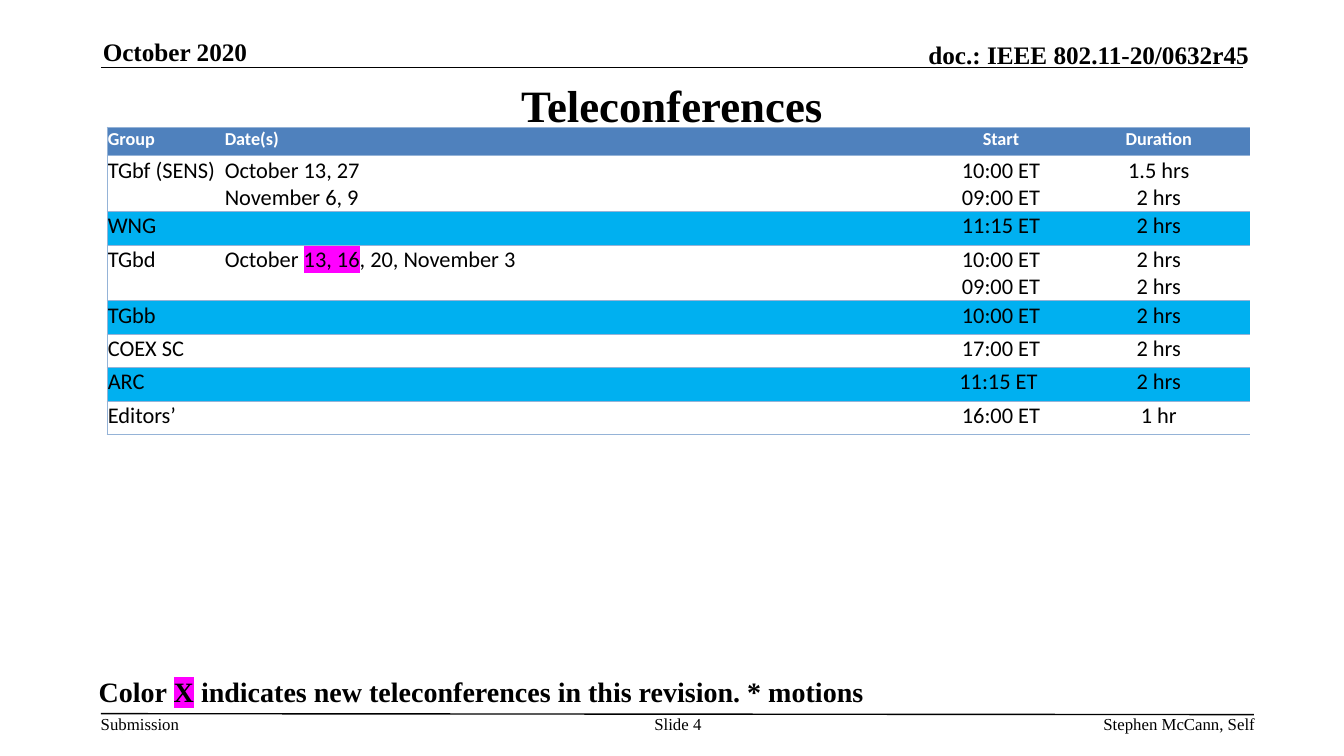
from dataclasses import dataclass
from typing import Any

from lxml.etree import SubElement as Sub
from pptx import Presentation
from pptx.dml.color import RGBColor as Rgb
from pptx.enum.shapes import MSO_CONNECTOR as Link
from pptx.enum.text import MSO_ANCHOR as Anchor, MSO_AUTO_SIZE as Auto, PP_ALIGN as Align
from pptx.oxml.ns import qn
from pptx.util import Inches, Pt

WIDE, HIGH = Inches(13.33), Inches(7.5)
HUES = {"ink": "000000", "paper": "FFFFFF", "head": "4F81BD",
        "band": "00B0F0", "rule": "95B3D7", "mark": "FF00FF"}
SERIF, SANS = "Times New Roman", "Calibri"
PLAIN_GRID = "{2D5ABB26-0587-4C30-8999-92F81FD0307C}"
SIDES = ("margin_left", "margin_right", "margin_top", "margin_bottom")
COLS = (8.7, 52.88, 9.9, 13.58)
HEAD_ROW, ONE_LINE, TWO_LINE = 3.8, 4.43, 7.3


@dataclass(frozen=True)
class Style:
    size: float
    bold: bool = False
    face: str = SERIF
    hue: str = "ink"


@dataclass(frozen=True)
class Label:
    text: str
    box: tuple[float, float, float, float]
    style: Style
    align: Align = Align.LEFT
    anchor: Anchor = Anchor.TOP
    pad: tuple[float, float] = (0, 0)
    wrap: bool = True


@dataclass(frozen=True)
class Meeting:
    group: str
    dates: str
    start: str
    length: str


@dataclass(frozen=True)
class Rule:
    left: float
    top: float
    right: float
    base: float


SMALL, LARGE = Style(12), Style(18, True)
HEAD, BODY = Style(13, True, SANS, "paper"), Style(16, False, SANS)

TITLE = Label("Teleconferences", (7.5, 10, 85, 7.73), Style(32, True),
              Align.CENTER, Anchor.MIDDLE, (0.1, 0.05))
LABELS = (
    Label("Submission", (7.5, 94.4, 5.93, 2.67), SMALL, wrap=False),
    Label("doc.: IEEE 802.11-20/0632r45", (54.68, 5.2, 38.25, 4), LARGE,
          Align.RIGHT, Anchor.BOTTOM),
    Label("Slide 4", (47.55, 94.4, 5.78, 5.33), SMALL, Align.CENTER),
    Label("Stephen McCann, Self", (58.58, 94.4, 34.8, 2.67), SMALL, Align.RIGHT),
    Label("October 2020", (7.65, 4.8, 20.48, 4), LARGE, anchor=Anchor.BOTTOM),
    Label("Color |X| indicates new teleconferences in this revision. * motions",
          (6.6, 88.53, 88.43, 5.87), Style(20, True), pad=(0.1, 0.05)),
)
RULES = (Rule(7.5, 8.93, 92.5, 8.93), Rule(7.5, 94.4, 93.3, 94.53))
MEETINGS = (
    Meeting("Group", "Date(s)", "Start", "Duration"),
    Meeting("TGbf (SENS)", "October 13, 27\nNovember 6, 9",
            "10:00 ET\n09:00 ET", "1.5 hrs\n2 hrs"),
    Meeting("WNG", "", "11:15 ET", "2 hrs"),
    Meeting("TGbd", "October |13, 16|, 20, November 3",
            "10:00 ET\n09:00 ET", "2 hrs\n2 hrs"),
    Meeting("TGbb", "", "10:00 ET", "2 hrs"),
    Meeting("COEX SC", "", "17:00 ET", "2 hrs"),
    Meeting("ARC", "", "11:15 ET ", "2 hrs"),
    Meeting("Editors’", "", "16:00 ET", "1 hr"),
)


def across(share: float) -> int:
    return round(WIDE * share / 100)


def down(share: float) -> int:
    return round(HIGH * share / 100)


def place(box: tuple[float, float, float, float]) -> tuple[int, int, int, int]:
    left, top, width, height = box
    return across(left), down(top), across(width), down(height)


def apply(item: Any, values: dict[str, Any]) -> None:
    for name, value in values.items():
        setattr(item, name, value)


def shade(run: Any) -> None:
    props = run.font._element
    mark = Sub(props, qn("a:highlight"))
    Sub(mark, qn("a:srgbClr"), val=HUES["mark"])
    props.find(qn("a:solidFill")).addnext(mark)


def write(frame: Any, text: str, style: Style, align: Align) -> None:
    for row, line in enumerate(text.split("\n")):
        para = frame.paragraphs[0] if row == 0 else frame.add_paragraph()
        para.alignment = align
        for spot, part in enumerate(line.split("|")):
            if not part:
                continue
            run = para.add_run()
            run.text = part
            apply(run.font, {"size": Pt(style.size), "bold": style.bold, "name": style.face})
            run.font.color.rgb = Rgb.from_string(HUES[style.hue])
            if spot % 2:
                shade(run)


def set_label(shape: Any, label: Label) -> None:
    apply(shape, dict(zip(("left", "top", "width", "height"), place(label.box))))
    frame = shape.text_frame
    pads = [Inches(label.pad[spot // 2]) for spot in range(4)]
    apply(frame, dict(zip(SIDES, pads)) | {
        "word_wrap": label.wrap, "auto_size": Auto.NONE, "vertical_anchor": label.anchor})
    write(frame, label.text, label.style, label.align)


def add_rule(slide: Any, rule: Rule) -> None:
    line = slide.shapes.add_connector(Link.STRAIGHT, across(rule.left), down(rule.top),
                                      across(rule.right), down(rule.base))
    line.line.width = Pt(1)
    line.line.color.rgb = Rgb.from_string(HUES["ink"])
    Sub(line._element.spPr, qn("a:effectLst"))


def edge(cell: Any, sides: str) -> None:
    props = cell._tc.get_or_add_tcPr()
    for side in sides:
        line = Sub(props, qn(f"a:ln{side}"), w=str(Pt(0.5)))
        fill = Sub(line, qn("a:solidFill"))
        Sub(fill, qn("a:srgbClr"), val=HUES["rule"])


def paint(cell: Any, row: int) -> None:
    if row and row % 2:
        cell.fill.background()
        return
    cell.fill.solid()
    cell.fill.fore_color.rgb = Rgb.from_string(HUES["band" if row else "head"])


def add_grid(slide: Any) -> None:
    tall = [TWO_LINE if "\n" in item.start else ONE_LINE for item in MEETINGS]
    tall[0] = HEAD_ROW
    box = place((7.95, 16.8, sum(COLS), sum(tall)))
    shape = slide.shapes.add_table(len(MEETINGS), len(COLS), *box)
    grid = shape.table
    apply(grid, {"first_row": False, "horz_banding": False})
    for style in shape._element.iter(qn("a:tableStyleId")):
        style.text = PLAIN_GRID
    for col, share in zip(grid.columns, COLS):
        col.width = across(share)
    pads = dict(zip(SIDES, map(Inches, (0.01, 0.01, 0.01, 0))))
    for row, (item, share) in enumerate(zip(MEETINGS, tall)):
        grid.rows[row].height = down(share)
        for col, text in enumerate((item.group, item.dates, item.start, item.length)):
            cell = grid.cell(row, col)
            apply(cell, pads)
            edge(cell, "TB" if col else "LTB")
            paint(cell, row)
            write(cell.text_frame, text, BODY if row else HEAD,
                  Align.CENTER if col > 1 else Align.LEFT)


def main() -> None:
    deck = Presentation()
    apply(deck, {"slide_width": WIDE, "slide_height": HIGH})
    slide = deck.slides.add_slide(deck.slide_layouts[5])
    for rule in RULES:
        add_rule(slide, rule)
    set_label(slide.shapes.title, TITLE)
    for label in LABELS:
        set_label(slide.shapes.add_textbox(*place(label.box)), label)
    add_grid(slide)
    deck.save("out.pptx")


if __name__ == "__main__":
    main()
